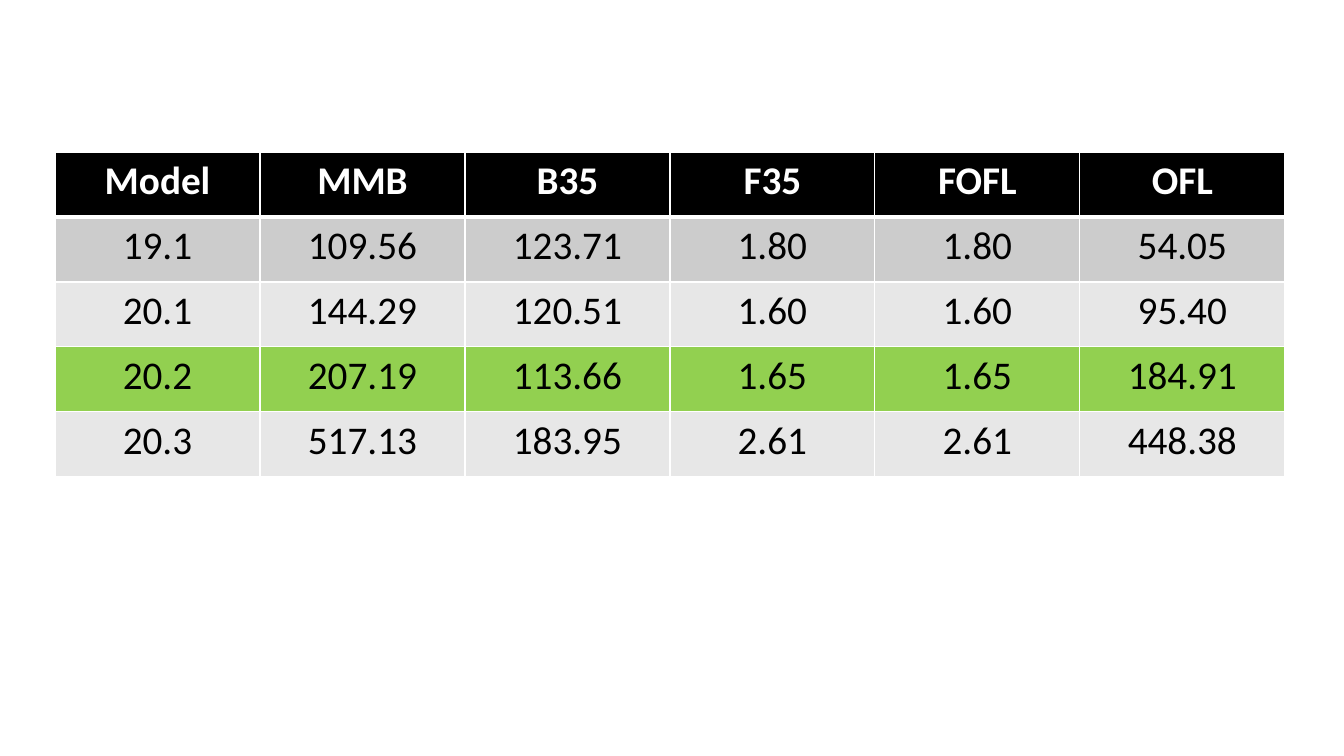
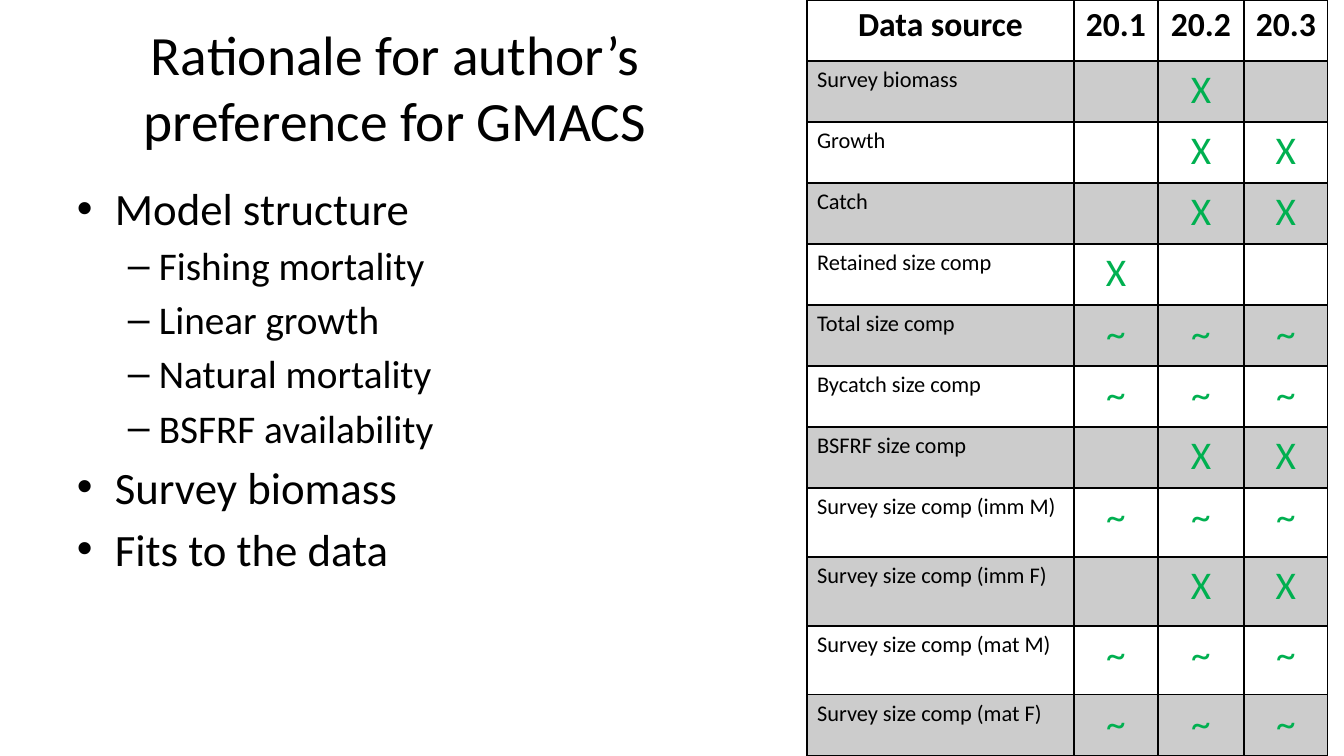
from lxml.etree import SubElement
from pptx import Presentation
from pptx.dml.color import RGBColor
from pptx.enum.text import MSO_ANCHOR as Anchor, MSO_AUTO_SIZE as AutoSize, PP_ALIGN as Align
from pptx.oxml import parse_xml
from pptx.oxml.ns import nsdecls, qn
from pptx.util import Emu, Pt

EMU_PER_PX = 914400 / 100.8
TITLE_ONLY, BLANK = 5, 6
BLACK, WHITE, GREY, PALE = "000000", "FFFFFF", "CCCCCC", "E7E7E7"
GREEN, LIME = "00B050", "92D050"

MODELS = [
    ("Model", "MMB", "B35", "F35", "FOFL", "OFL"),
    ("19.1", "109.56", "123.71", "1.80", "1.80", "54.05"),
    ("20.1", "144.29", "120.51", "1.60", "1.60", "95.40"),
    ("20.2", "207.19", "113.66", "1.65", "1.65", "184.91"),
    ("20.3", "517.13", "183.95", "2.61", "2.61", "448.38"),
]
SOURCES = [
    ("Data source", "20.1", "20.2", "20.3"),
    ("Survey biomass", "", "X", ""),
    ("Growth", "", "X", "X"),
    ("Catch", "", "X", "X"),
    ("Retained size comp", "X", "", ""),
    ("Total size comp", "~", "~", "~"),
    ("Bycatch size comp", "~", "~", "~"),
    ("BSFRF size comp", "", "X", "X"),
    ("Survey size comp (imm M)", "~", "~", "~"),
    ("Survey size comp (imm F)", "", "X", "X"),
    ("Survey size comp (mat M)", "~", "~", "~"),
    ("Survey size comp (mat F)", "~", "~", "~"),
]
RATIONALE = [
    (0, "Model structure"),
    (1, "Fishing mortality"),
    (1, "Linear growth"),
    (1, "Natural mortality"),
    (1, "BSFRF availability"),
    (0, "Survey biomass"),
    (0, "Fits to the data"),
]


def px(length):
    return Emu(round(length * EMU_PER_PX))


def color(value):
    return RGBColor.from_string(value)


class Deck:
    """Builds pages in one shared style."""

    font = {"name": "Calibri", "bold": False}
    levels = [
        {"size": 32, "mark": "•", "left": 38, "hang": 38, "before": 6},
        {"size": 28, "mark": "–", "left": 82, "hang": 31, "before": 5},
    ]

    def __init__(self, width, height):
        self.deck = Presentation()
        self.deck.slide_width, self.deck.slide_height = px(width), px(height)
        self.page = None

    def add_page(self, layout):
        self.page = self.deck.slides.add_slide(self.deck.slide_layouts[layout])

    def add_text(self, para, text, size, ink=BLACK, align=Align.LEFT, **extra):
        para.alignment = align
        if not text:
            return
        span = para.add_run()
        span.text = text
        for name, value in {**self.font, "size": Pt(size), **extra}.items():
            setattr(span.font, name, value)
        span.font.color.rgb = color(ink)

    def place(self, box, at, anchor):
        for name, length in zip(("left", "top", "width", "height"), at):
            setattr(box, name, px(length))
        frame = box.text_frame
        settings = {"word_wrap": True, "auto_size": AutoSize.NONE, "vertical_anchor": anchor}
        for name, value in settings.items():
            setattr(frame, name, value)
        return frame

    def title(self, text, at, size):
        frame = self.place(self.page.shapes.title, at, Anchor.MIDDLE)
        self.add_text(frame.paragraphs[0], text, size, align=Align.CENTER)

    def bullets(self, items, at):
        box = self.page.shapes.add_textbox(*map(px, at))
        frame = self.place(box, at, Anchor.TOP)
        for index, (depth, text) in enumerate(items):
            para = frame.add_paragraph() if index else frame.paragraphs[0]
            level = self.levels[depth]
            para.level = depth
            para.space_before = Pt(level["before"])
            self.add_text(para, text, level["size"])
            props = para._p.get_or_add_pPr()
            props.set("marL", str(px(level["left"])))
            props.set("indent", str(-px(level["hang"])))
            SubElement(props, qn("a:buFont")).set("typeface", "Arial")
            SubElement(props, qn("a:buChar")).set("char", level["mark"])

    def borders(self, cell, ink, widths):
        props = cell._tc.get_or_add_tcPr()
        for index, (side, width) in enumerate(zip("LRTB", widths)):
            props.insert(index, parse_xml(
                f'<a:ln{side} {nsdecls("a")} w="{Pt(width)}"><a:solidFill>'
                f'<a:srgbClr val="{ink}"/></a:solidFill></a:ln{side}>'))

    def table(self, data, at, widths, heights, fills, styles, line, rule):
        left, top = at
        frame = self.page.shapes.add_table(
            len(heights), len(widths), px(left), px(top), px(sum(widths)), px(sum(heights)))
        table = frame.table
        table.horz_banding = False
        for column, width in zip(table.columns, widths):
            column.width = px(width)
        for number, (row, height) in enumerate(zip(table.rows, heights)):
            row.height = px(height)
            for index, (cell, text) in enumerate(zip(row.cells, data[number])):
                if fills[number]:
                    cell.fill.solid()
                    cell.fill.fore_color.rgb = color(fills[number])
                else:
                    cell.fill.background()
                kind = "head" if number == 0 else "first" if index == 0 else "rest"
                self.add_text(cell.text_frame.paragraphs[0], text, **styles[kind])
                above = rule if number == 1 else 1
                below = rule if number == 0 else 1
                self.borders(cell, line, (1, 1, above, below))

    def save(self):
        self.deck.save("out.pptx")


def main():
    deck = Deck(1344, 756)

    deck.add_page(BLANK)
    value = {"size": 28, "align": Align.CENTER}
    head = {**value, "ink": WHITE, "bold": True}
    deck.table(MODELS, (55, 152), [205] * 6, [65] * 5, [BLACK, GREY, PALE, LIME, PALE],
               {"head": head, "first": value, "rest": value}, WHITE, 3)

    deck.add_page(TITLE_ONLY)
    deck.title("Rationale for author’s preference for GMACS", (29, 30, 732, 113), 39.6)
    deck.bullets(RATIONALE, (67, 176, 1210, 499))
    styles = {
        "head": {"size": 24, "align": Align.CENTER, "bold": True},
        "first": {"size": 16},
        "rest": {"size": 28, "ink": GREEN, "align": Align.CENTER},
    }
    deck.table(SOURCES, (807, 0), [267, 84, 86, 84], [61] * 8 + [69] * 3 + [61],
               [None, GREY] * 6, styles, BLACK, 2)

    deck.save()


if __name__ == "__main__":
    main()
